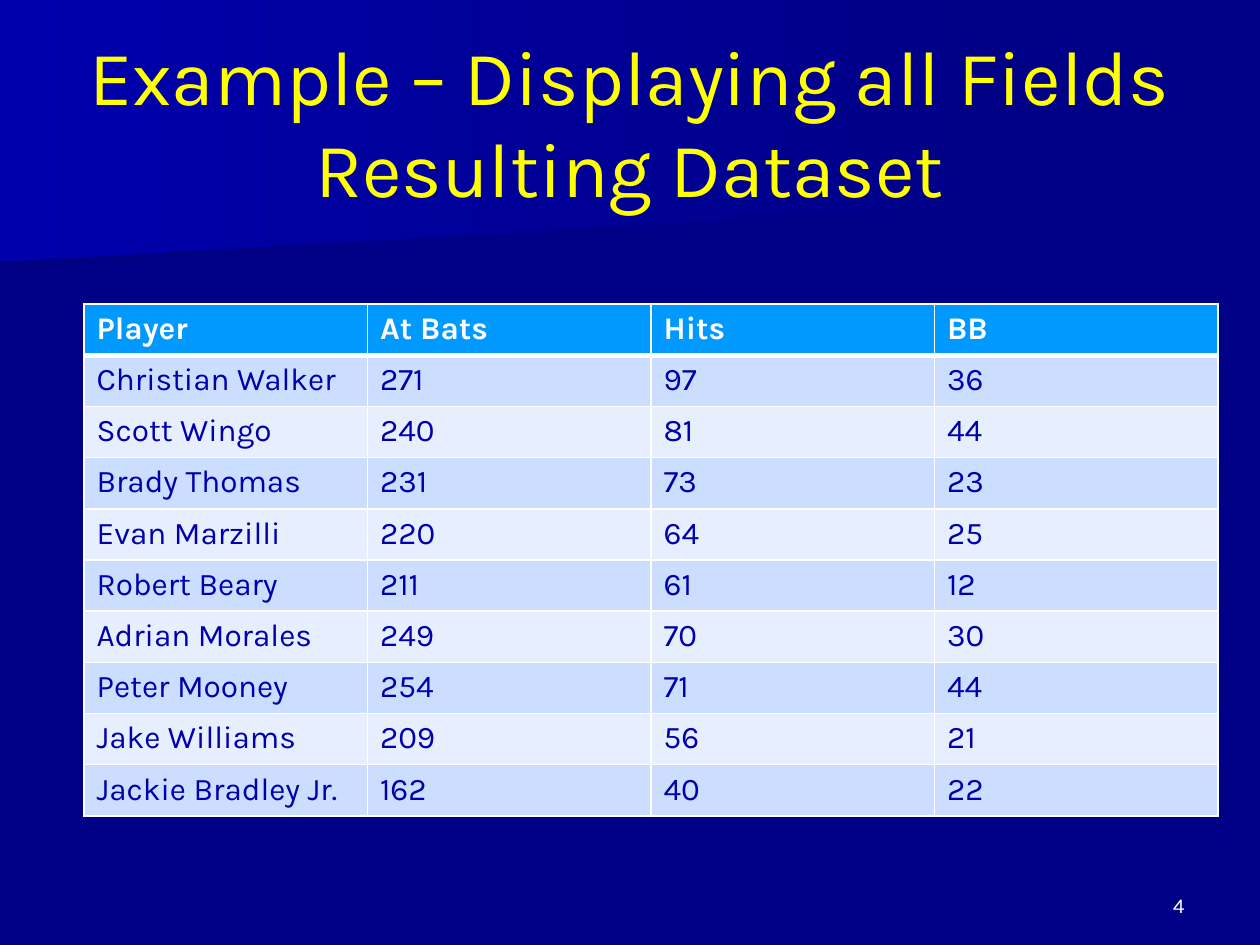
from pptx import Presentation
from pptx import util as u
from pptx.dml import color
from pptx.enum import text
from pptx.oxml import parse_xml
from pptx.oxml.ns import nsdecls

FONT = "Karla"
WHITE, NAVY, BLUE = "FFFFFF", "000086", "0000AC"
STATS = [
    ("Player", "At Bats", "Hits", "BB"),
    ("Christian Walker", "271", "97", "36"),
    ("Scott Wingo", "240", "81", "44"),
    ("Brady Thomas", "231", "73", "23"),
    ("Evan Marzilli", "220", "64", "25"),
    ("Robert Beary", "211", "61", "12"),
    ("Adrian Morales", "249", "70", "30"),
    ("Peter Mooney", "254", "71", "44"),
    ("Jake Williams", "209", "56", "21"),
    ("Jackie Bradley Jr.", "162", "40", "22"),
]


def px(n):
    """Turn pixels into EMU."""
    return u.Emu(round(n * 914400 / 126))


def rgb(code):
    """Turn a hex string into a colour."""
    return color.RGBColor.from_string(code)


def style(frame, size, code, align, bold=False):
    """Format every run of a text frame."""
    for para in frame.paragraphs:
        para.alignment = align
        for run in para.runs:
            font = run.font
            font.name, font.size, font.bold = FONT, u.Pt(size), bold
            font.color.rgb = rgb(code)


def add_band(slide, points, start, end):
    """Draw a backdrop band with a left to right gradient."""
    draw = slide.shapes.build_freeform(*points[0], scale=px(1))
    draw.add_line_segments(points[1:], close=True)
    band = draw.convert_to_shape()
    band.shadow.inherit = False
    band.line.fill.background()
    band.fill.gradient()
    band.fill.gradient_angle = 0
    for stop, code in zip(band.fill.gradient_stops, (start, end)):
        stop.color.rgb = rgb(code)


def set_title(slide, words):
    """Place and format the title in front of the bands."""
    title = slide.shapes.title
    slide.shapes._spTree.append(title._element)
    title.left, title.top, title.width, title.height = map(px, (63, 42, 1134, 158))
    frame = title.text_frame
    frame.text = words
    frame.auto_size = text.MSO_AUTO_SIZE.NONE
    frame.vertical_anchor = text.MSO_ANCHOR.MIDDLE
    style(frame, 44, "FFFF00", text.PP_ALIGN.CENTER)


def set_edge(cell, side, width):
    """Add a white border to one side of a cell."""
    cell._tc.get_or_add_tcPr().append(parse_xml(
        f'<a:{side} {nsdecls("a")} w="{u.Pt(width)}"><a:solidFill>'
        f'<a:srgbClr val="{WHITE}"/></a:solidFill></a:{side}>'))


def fill_cell(cell, words, row):
    """Write and format one table cell."""
    head = row == 0
    cell.text = words
    style(cell.text_frame, 18, WHITE if head else BLUE, text.PP_ALIGN.LEFT, head)
    widths = {"lnL": 1, "lnR": 1, "lnT": 3 if row == 1 else 1, "lnB": 3 if head else 1}
    for side, width in widths.items():
        set_edge(cell, side, width)
    cell.fill.solid()
    cell.fill.fore_color.rgb = rgb("0099FF" if head else ("E7EFFF", "CBDEFF")[row % 2])


def add_stats(slide, rows):
    """Add the table of player figures."""
    box = map(px, (84, 304, 1134, 512))
    table = slide.shapes.add_table(len(rows), len(rows[0]), *box).table
    for r, row in enumerate(rows):
        for c, words in enumerate(row):
            fill_cell(table.cell(r, c), words, r)


def add_number(slide, words):
    """Add the slide number at the lower right."""
    frame = slide.shapes.add_textbox(*map(px, (903, 861, 294, 63))).text_frame
    frame.word_wrap = True
    frame.vertical_anchor = text.MSO_ANCHOR.BOTTOM
    frame.text = words
    style(frame, 12, WHITE, text.PP_ALIGN.RIGHT)


def main():
    """Build and save the slide."""
    deck = Presentation()
    deck.slide_width, deck.slide_height = px(1260), px(945)
    slide = deck.slides.add_slide(deck.slide_layouts[5])
    slide.background.fill.solid()
    slide.background.fill.fore_color.rgb = rgb(NAVY)
    add_band(slide, [(980, 193), (0, 273), (0, 127), (982, 127), (980, 161)], "000083", NAVY)
    add_band(slide, [(998, 204), (0, 262), (0, 0), (998, 0)], BLUE, NAVY)
    set_title(slide, "Example – Displaying all Fields\vResulting Dataset")
    add_stats(slide, STATS)
    add_number(slide, "4")
    deck.save("out.pptx")


if __name__ == "__main__":
    main()
